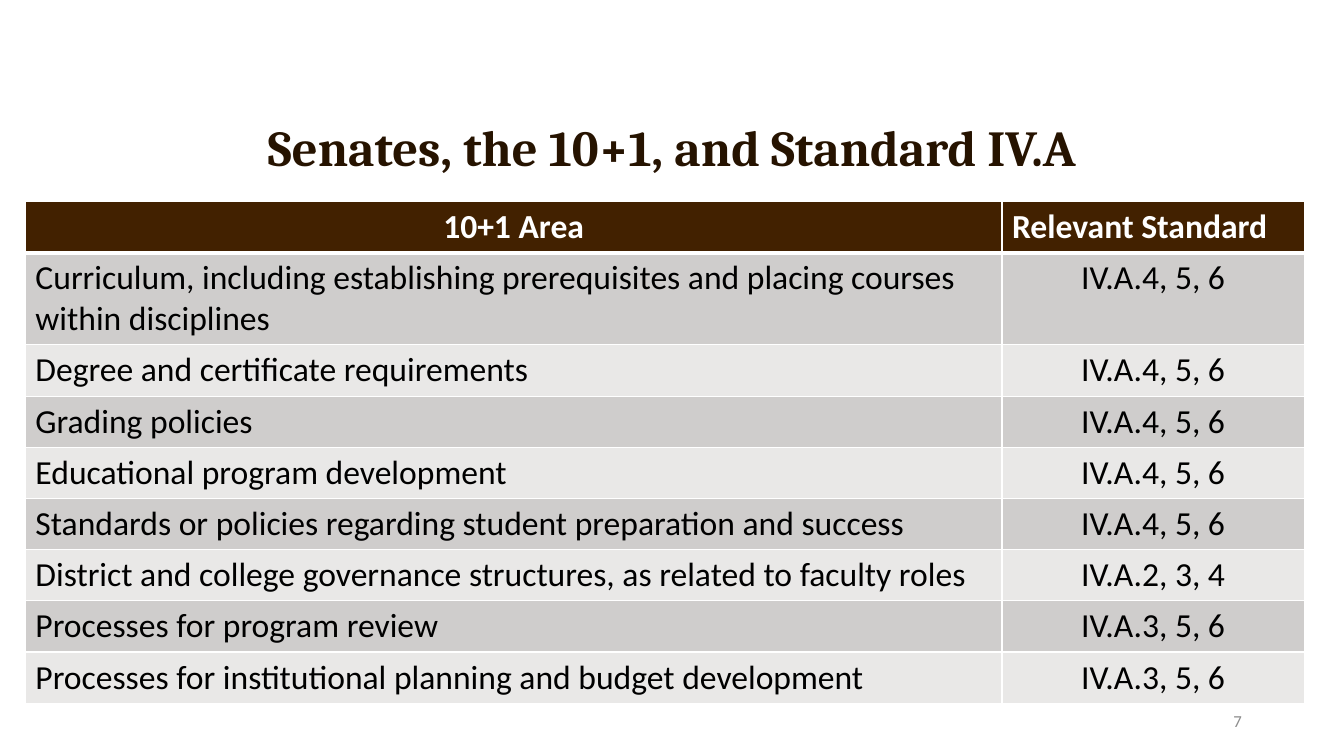
"""Build a slide that maps the 10+1 areas to their parts of Standard IV.A."""
import pptx
import pptx.dml.color
import pptx.enum.text
import pptx.oxml
import pptx.oxml.ns
import pptx.util

Cm = pptx.util.Cm
Align = pptx.enum.text.PP_ALIGN
Anchor = pptx.enum.text.MSO_ANCHOR


class Theme:
    head_font, body_font = "Cambria", "Calibri"
    title_size, table_size, num_size = 36, 24, 12
    title, num = "261300", "8C8C8C"
    head, light, text = "422100", "FFFFFF", "000000"
    bands = ["CFCDCC", "E9E8E7"]


def write(frame, text, font, size, color, align, bold=False):
    para = frame.paragraphs[0]
    para.alignment = align
    run = para.add_run()
    run.text = text
    run.font.name = font
    run.font.size = pptx.util.Pt(size)
    run.font.bold = bold
    run.font.color.rgb = pptx.dml.color.RGBColor.from_string(color)
    return para


def edge(cell, side, width):
    cell._tc.get_or_add_tcPr().append(pptx.oxml.parse_xml(
        f'<a:ln{side} {pptx.oxml.ns.nsdecls("a")} w="{pptx.util.Pt(width)}">'
        f'<a:solidFill><a:srgbClr val="{Theme.light}"/></a:solidFill>'
        f'</a:ln{side}>'))


deck = pptx.Presentation()
deck.slide_width, deck.slide_height = Cm(33.87), Cm(19.05)
slide = deck.slides.add_slide(deck.slide_layouts[5])

title = slide.shapes.title
title.left, title.top, title.width, title.height = Cm(2.33), Cm(2.52), Cm(29.21), Cm(2.54)
title.text_frame.vertical_anchor = Anchor.MIDDLE
para = write(title.text_frame, "Senates, the 10+1, and Standard IV.A", Theme.head_font,
             Theme.title_size, Theme.title, Align.CENTER, True)
para.line_spacing = 0.9

rows = [
    ("10+1 Area", "Relevant Standard"),
    ("Curriculum, including establishing prerequisites and placing courses "
     "within disciplines", "IV.A.4, 5, 6"),
    ("Degree and certificate requirements", "IV.A.4, 5, 6"),
    ("Grading policies", "IV.A.4, 5, 6"),
    ("Educational program development", "IV.A.4, 5, 6"),
    ("Standards or policies regarding student preparation and success", "IV.A.4, 5, 6"),
    ("District and college governance structures, as related to faculty roles",
     "IV.A.2, 3, 4"),
    ("Processes for program review", "IV.A.3, 5, 6"),
    ("Processes for institutional planning and budget development", "IV.A.3, 5, 6"),
]
table = slide.shapes.add_table(len(rows), 2, Cm(0.64), Cm(5.08), Cm(32.23), Cm(12.7)).table
table.horz_banding = False
table.columns[0].width, table.columns[1].width = Cm(24.61), Cm(7.62)

for r, row in enumerate(rows):
    table.rows[r].height = Cm(2.32 if r == 1 else 1.29)
    first = r == 0
    for c, text in enumerate(row):
        cell = table.cell(r, c)
        edge(cell, "L", 1)
        edge(cell, "R", 1)
        edge(cell, "T", 3 if r == 1 else 1)
        edge(cell, "B", 3 if first else 1)
        cell.fill.solid()
        fill = Theme.head if first else Theme.bands[(r - 1) % 2]
        cell.fill.fore_color.rgb = pptx.dml.color.RGBColor.from_string(fill)
        write(cell.text_frame, text, Theme.body_font, Theme.table_size,
              Theme.light if first else Theme.text,
              Align.CENTER if first != (c == 1) else Align.LEFT, first)

num = slide.shapes.add_textbox(Cm(23.93), Cm(17.65), Cm(7.62), Cm(1.02)).text_frame
num.word_wrap = True
num.vertical_anchor = Anchor.MIDDLE
write(num, "7", Theme.body_font, Theme.num_size, Theme.num, Align.RIGHT)

deck.save("out.pptx")
